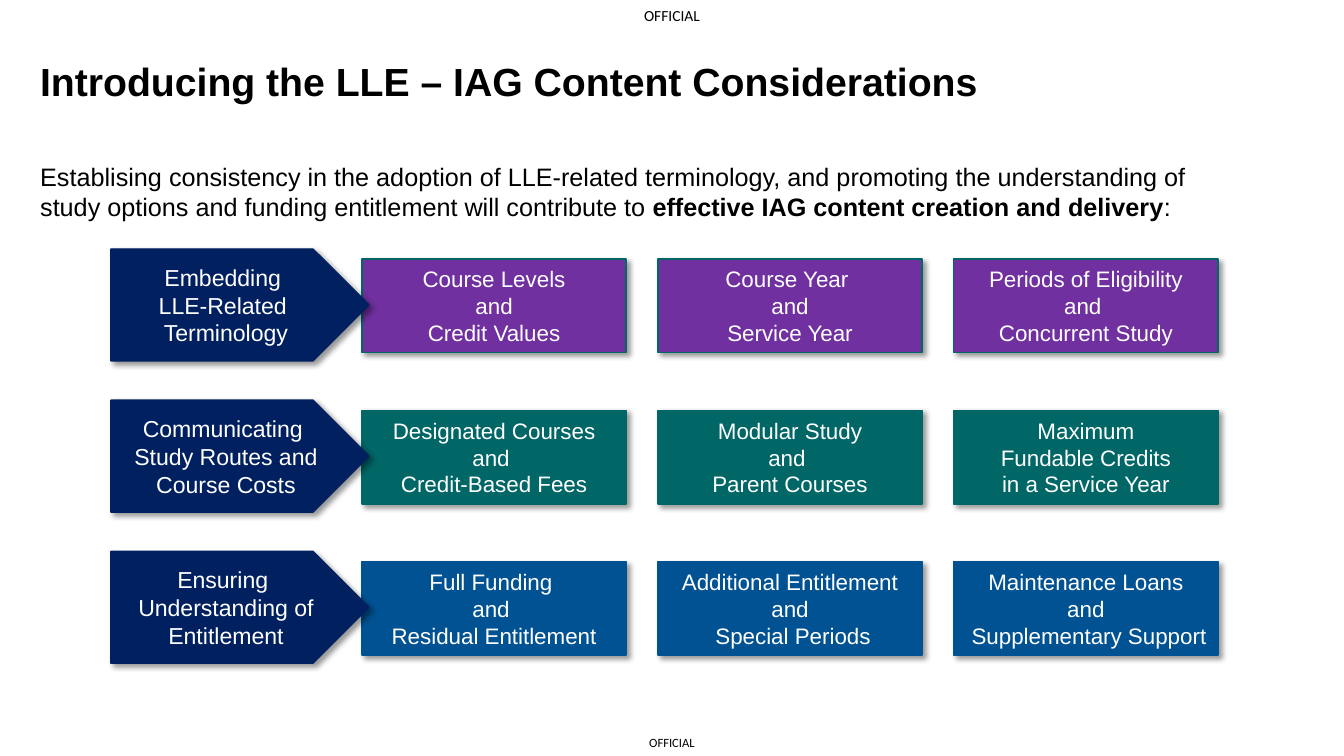
"""Build the LLE content considerations slide."""
from dataclasses import dataclass

from lxml import etree
from pptx import Presentation
from pptx.dml.color import RGBColor
from pptx.enum.shapes import MSO_SHAPE
from pptx.enum.text import MSO_ANCHOR, PP_ALIGN
from pptx.oxml import parse_xml
from pptx.oxml.ns import nsdecls, qn
from pptx.slide import Slide
from pptx.util import Inches, Pt

RECTANGLE = MSO_SHAPE.RECTANGLE
PENTAGON = MSO_SHAPE.PENTAGON
MIDDLE = MSO_ANCHOR.MIDDLE
TOP = MSO_ANCHOR.TOP
CENTER = PP_ALIGN.CENTER
LEFT = PP_ALIGN.LEFT

BLACK = RGBColor(0x00, 0x00, 0x00)
WHITE = RGBColor(0xFF, 0xFF, 0xFF)
NAVY = RGBColor(0x00, 0x20, 0x60)
PURPLE = RGBColor(0x70, 0x30, 0xA0)
TEAL = RGBColor(0x00, 0x66, 0x66)
BLUE = RGBColor(0x00, 0x52, 0x93)

ROW_PITCH = 1.5
COLUMN_PITCH = 2.935


@dataclass(frozen=True)
class Label:
    left: float
    top: float
    width: float
    height: float
    lines: list[list[tuple[str, bool]]]
    size: float
    font: str = "Arial"
    align: PP_ALIGN = LEFT
    anchor: MSO_ANCHOR = MIDDLE
    inset: bool = True
    spacing: float = 1.0


@dataclass(frozen=True)
class Theme:
    heading: str
    topics: list[str]
    fill: RGBColor
    outline: RGBColor


LABELS = [
    Label(6.3, 7.23, 0.73, 0.27, [[("OFFICIAL", False)]], 9, "Calibri", CENTER, inset=False),
    Label(6.23, 0, 0.87, 0.31, [[("OFFICIAL", False)]], 11, "Calibri", CENTER, inset=False),
    Label(0.3, 0.48, 11.5, 0.71,
          [[("Introducing the LLE – IAG Content Considerations", True)]], 28, spacing=0.9),
    Label(0.3, 1.55, 12.19, 0.75, [
        [("Establising consistency in the adoption of LLE-related terminology, "
          "and promoting the understanding of", False)],
        [("study options and funding entitlement will contribute to ", False),
         ("effective IAG content creation and delivery", True), (":", False)],
    ], 18, anchor=TOP),
]

THEMES = [
    Theme("Embedding \nLLE-Related \nTerminology",
          ["Course Levels\nand\nCredit Values",
           "Course Year \nand\nService Year",
           "Periods of Eligibility\nand \nConcurrent Study"], PURPLE, TEAL),
    Theme("Communicating \nStudy Routes and\nCourse Costs",
          ["Designated Courses\nand \nCredit-Based Fees",
           "Modular Study\nand \nParent Courses",
           "Maximum\n Fundable Credits \nin a Service Year"], TEAL, TEAL),
    Theme("Ensuring \nUnderstanding of Entitlement",
          ["Full Funding \nand \nResidual Entitlement",
           "Additional Entitlement\nand\n Special Periods",
           "Maintenance Loans\nand\n Supplementary Support"], BLUE, BLUE),
]


def add_label(slide: Slide, label: Label) -> None:
    """Add a text box whose runs may be bold."""
    shape = slide.shapes.add_textbox(
        Inches(label.left), Inches(label.top), Inches(label.width), Inches(label.height))
    frame = shape.text_frame
    frame.word_wrap = True
    frame.vertical_anchor = label.anchor
    if not label.inset:
        frame.margin_left = frame.margin_right = frame.margin_top = frame.margin_bottom = 0
    for index, line in enumerate(label.lines):
        paragraph = frame.add_paragraph() if index else frame.paragraphs[0]
        paragraph.alignment = label.align
        paragraph.line_spacing = label.spacing
        paragraph.font.name = label.font
        paragraph.font.size = Pt(label.size)
        paragraph.font.color.rgb = BLACK
        for text, bold in line:
            run = paragraph.add_run()
            run.text = text
            run.font.bold = bold


def add_shadow(properties: etree._Element) -> None:
    """Fill the effect list of a shape with a soft diagonal shadow."""
    effects = properties.find(qn("a:effectLst"))
    effects.append(parse_xml(
        f'<a:outerShdw {nsdecls("a")} blurRad="{Pt(4)}" dist="{Pt(3)}" dir="2700000" '
        'algn="tl" rotWithShape="0"><a:srgbClr val="000000"><a:alpha val="40000"/>'
        '</a:srgbClr></a:outerShdw>'))


def add_block(slide: Slide, kind: MSO_SHAPE, left: float, top: float, width: float,
              height: float, text: str, size: float, fill: RGBColor, outline: RGBColor) -> None:
    """Add a filled, shadowed shape with centred white text."""
    shape = slide.shapes.add_shape(
        kind, Inches(left), Inches(top), Inches(width), Inches(height))
    shape.fill.solid()
    shape.fill.fore_color.rgb = fill
    shape.line.color.rgb = outline
    shape.line.width = Pt(1)
    shape.shadow.inherit = False
    add_shadow(shape._element.spPr)
    frame = shape.text_frame
    frame.word_wrap = True
    frame.vertical_anchor = MIDDLE
    frame.text = text
    for paragraph in frame.paragraphs:
        paragraph.alignment = CENTER
        paragraph.font.name = "Arial"
        paragraph.font.size = Pt(size)
        paragraph.font.color.rgb = WHITE


def main() -> None:
    """Create and save the presentation."""
    presentation = Presentation()
    presentation.slide_width = Inches(13.33)
    presentation.slide_height = Inches(7.5)
    slide = presentation.slides.add_slide(presentation.slide_layouts[6])
    for label in LABELS:
        add_label(slide, label)
    for row, theme in enumerate(THEMES):
        offset = row * ROW_PITCH
        for column, topic in enumerate(theme.topics):
            add_block(slide, RECTANGLE, 3.59 + column * COLUMN_PITCH, 2.57 + offset,
                      2.62, 0.93, topic, 16, theme.fill, theme.outline)
        add_block(slide, PENTAGON, 1.1, 2.47 + offset, 2.56, 1.11,
                  theme.heading, 16.5, NAVY, NAVY)
    presentation.save("out.pptx")


if __name__ == "__main__":
    main()
